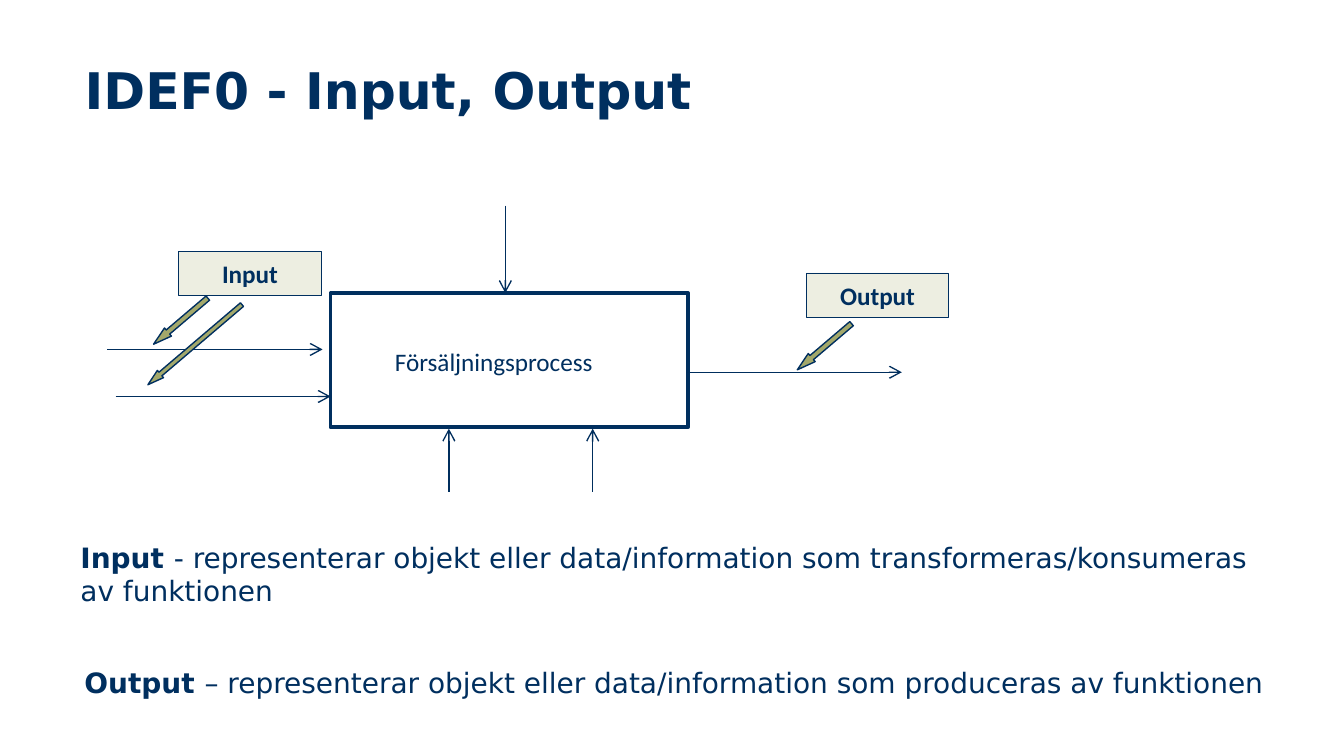
from lxml import etree
from pptx import Presentation
from pptx.dml.color import RGBColor
from pptx.enum.shapes import MSO_CONNECTOR, MSO_SHAPE as SHAPE
from pptx.enum.text import MSO_ANCHOR as ANCHOR, PP_ALIGN as ALIGN
from pptx.oxml.ns import qn
from pptx.util import Inches, Pt

COLORS = {"navy": "002F5F", "flow": "002E5D", "white": "FFFFFF",
          "label": "EDEEE1", "pointer": "A3A86B"}
HEADING_FONT, DIAGRAM_FONT = "DejaVu Sans", "Calibri"


def color(name):
    """Return the named colour."""
    return RGBColor.from_string(COLORS[name])


def style_para(para, font, size, bold=None):
    """Set the font of a whole paragraph."""
    para.font.name = font
    para.font.size = Pt(size)
    para.font.bold = bold
    para.font.color.rgb = color("navy")


def add_block(page, kind, box, fill, line_width):
    """Add a filled shape with a navy outline."""
    block = page.shapes.add_shape(kind, *map(Inches, box))
    block.shadow.inherit = False
    block.fill.solid()
    block.fill.fore_color.rgb = color(fill)
    block.line.color.rgb = color("navy")
    block.line.width = Pt(line_width)
    return block


def add_text(page, box):
    """Add a wrapping text box and return its first paragraph."""
    frame = page.shapes.add_textbox(*map(Inches, box)).text_frame
    frame.word_wrap = True
    return frame.paragraphs[0]


def add_flow(page, start, end):
    """Add a thin line with an open arrowhead at its end."""
    flow = page.shapes.add_connector(
        MSO_CONNECTOR.STRAIGHT, *map(Inches, (*start, *end)))
    flow.line.color.rgb = color("flow")
    flow.line.width = Pt(0.75)
    etree.SubElement(flow.line._get_or_add_ln(), qn("a:tailEnd"), type="arrow")
    etree.SubElement(flow._element.spPr, qn("a:effectLst"))


def add_label(page, box, text):
    """Add a tinted label with centred bold text."""
    frame = add_block(page, SHAPE.RECTANGLE, box, "label", 0.25).text_frame
    frame.vertical_anchor = ANCHOR.MIDDLE
    para = frame.paragraphs[0]
    para.text = text
    para.alignment = ALIGN.CENTER
    style_para(para, DIAGRAM_FONT, 13.5, True)


def add_pointer(page, box):
    """Add a slanted block arrow that leads from a label to a flow."""
    pointer = add_block(page, SHAPE.LEFT_ARROW, box, "pointer", 0.75)
    pointer.adjustments[1] = 1.76
    pointer.rotation = 319.6


def add_title(page, box, text):
    """Place and format the title."""
    title = page.shapes.title
    title.left, title.top, title.width, title.height = map(Inches, box)
    frame = title.text_frame
    frame.vertical_anchor = ANCHOR.TOP
    para = frame.paragraphs[0]
    para.text = text
    para.alignment = ALIGN.LEFT
    style_para(para, HEADING_FONT, 27, True)


def add_diagram(page, box):
    """Draw the process box with its flows, labels and pointers."""
    left, top, width, height = box
    right, bottom = left + width, top + height
    add_block(page, SHAPE.RECTANGLE, box, "white", 2)
    for end_x, y in ((left - 0.06, top + 0.42), (left, top + 0.77)):
        add_flow(page, (end_x - 1.6, y), (end_x, y))
    add_flow(page, (right - 0.01, top + 0.59), (right + 1.59, top + 0.59))
    add_flow(page, (left + 1.3, top - 0.65), (left + 1.3, top))
    for x in (left + 0.88, left + 1.95):
        add_flow(page, (x, bottom + 0.48), (x, bottom + 0.01))

    para = add_text(page, (left + 0.38, top + 0.35, 1.98, 0.33))
    para.text = "Försäljningsprocess"
    style_para(para, DIAGRAM_FONT, 13.5)

    add_label(page, (right + 0.88, top - 0.15, 1.06, 0.33), "Output")
    add_label(page, (left - 1.13, top - 0.31, 1.06, 0.33), "Input")
    add_pointer(page, (left - 1.38, top + 0.17, 0.53, 0.08))
    add_pointer(page, (left - 1.47, top + 0.35, 0.92, 0.07))
    add_pointer(page, (right + 0.75, top + 0.36, 0.53, 0.08))


def add_definition(page, box, term, meaning):
    """Write a bold term followed by its meaning."""
    para = add_text(page, box)
    para.space_after = Pt(9)
    style_para(para, HEADING_FONT, 15)
    for text, bold in ((term + " ", True), (meaning, False)):
        span = para.add_run()
        span.text = text
        span.font.bold = bold


def main():
    """Build and save the slide."""
    deck = Presentation()
    deck.slide_width = Inches(10)
    deck.slide_height = deck.slide_width * 9 // 16
    page = deck.slides.add_slide(deck.slide_layouts[5])
    add_title(page, (0.53, 0.39, 6.75, 0.94), "IDEF0 - Input, Output")
    add_diagram(page, (2.46, 2.18, 2.66, 1))
    add_definition(
        page, (0.5, 3.97, 9.15, 0.61), "Input",
        "- representerar objekt eller data/information som "
        "transformeras/konsumeras av funktionen")
    add_definition(
        page, (0.53, 4.9, 9.34, 0.35), "Output",
        "– representerar objekt eller data/information som "
        "produceras av funktionen")
    deck.save("out.pptx")


if __name__ == "__main__":
    main()
